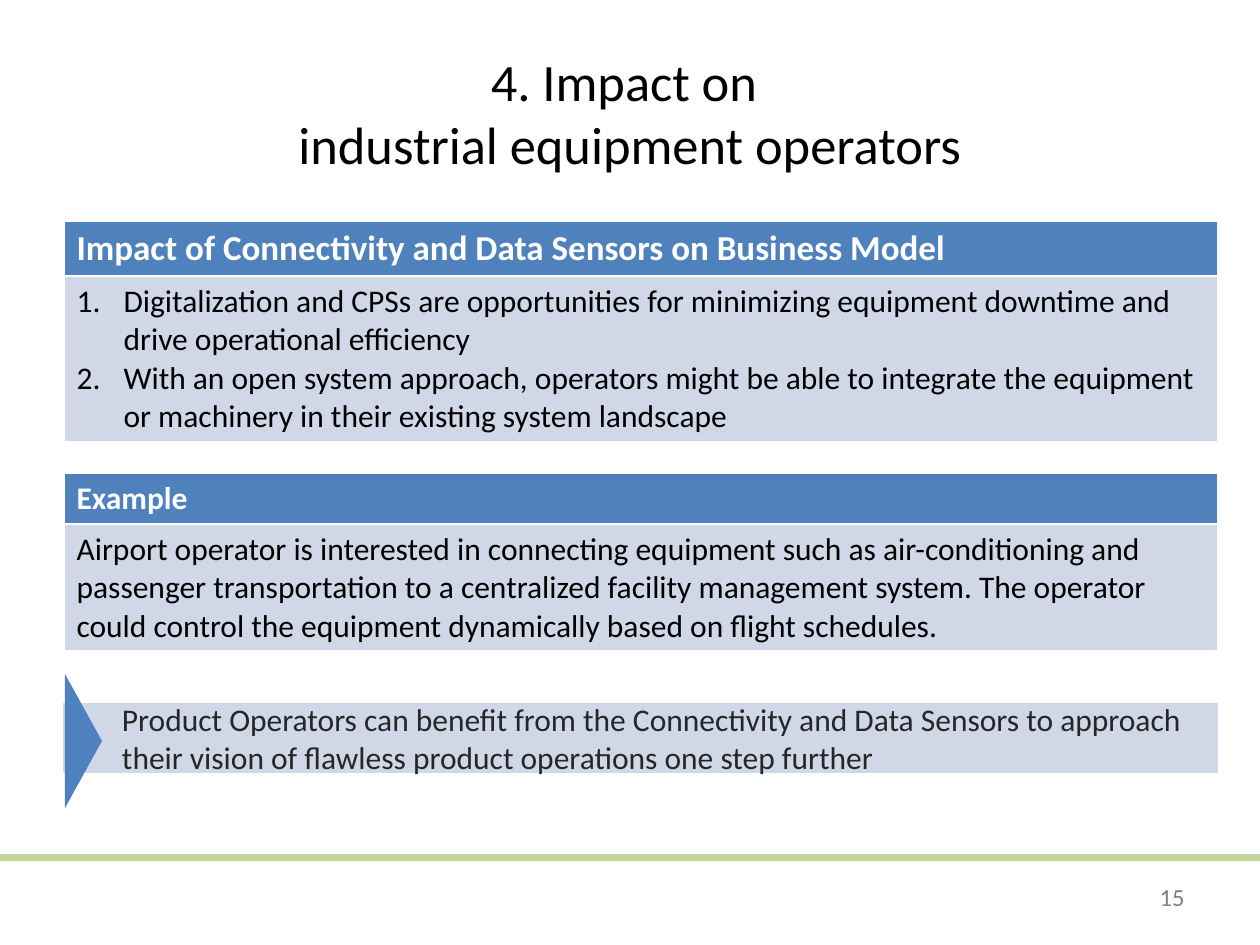
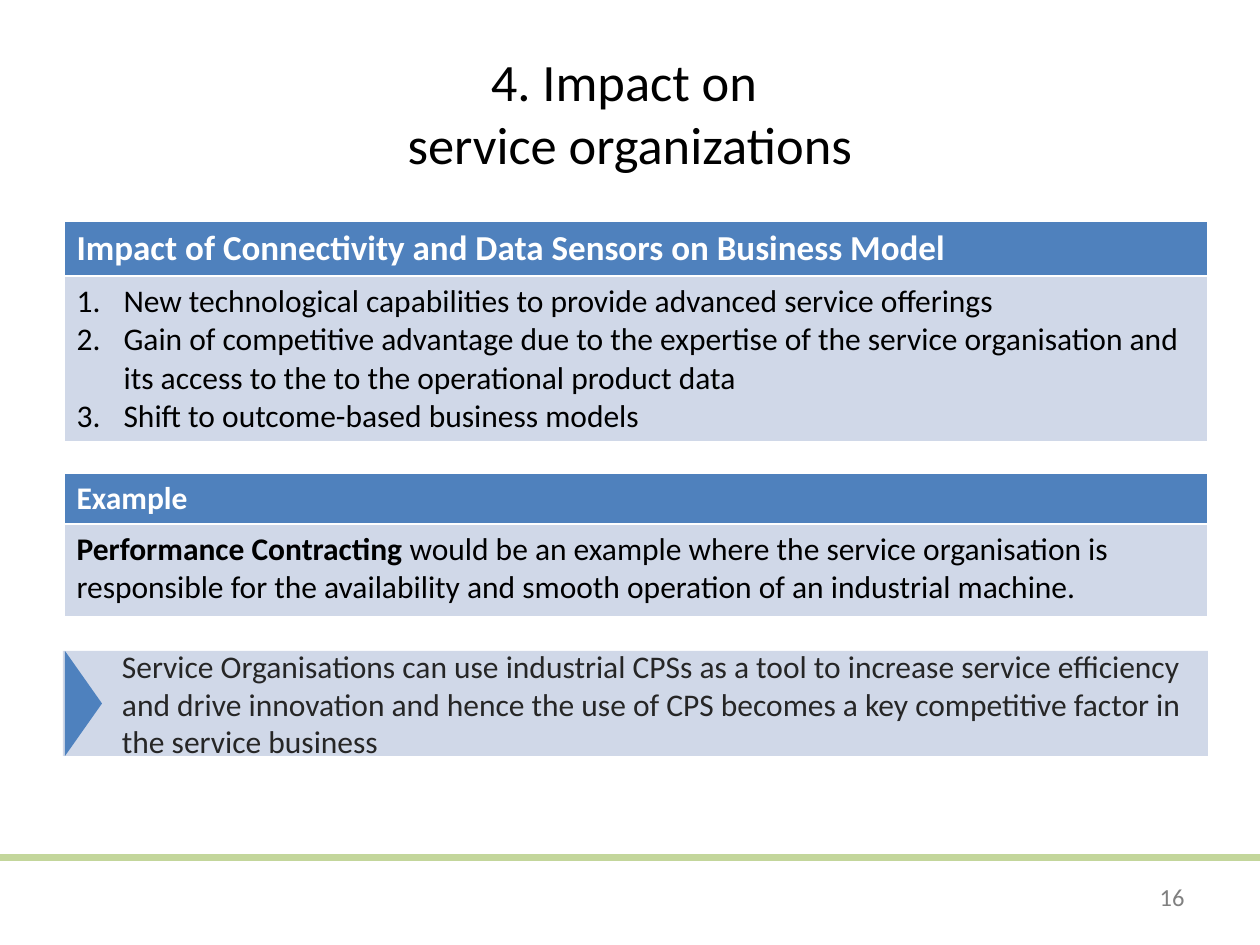
from lxml import etree
from pptx import Presentation
from pptx.dml.color import RGBColor
from pptx.enum.shapes import MSO_SHAPE
from pptx.enum.text import MSO_ANCHOR, PP_ALIGN
from pptx.oxml.ns import qn
from pptx.util import Emu, Pt

PX_PER_INCH = 126
LEFT = 63


def px(n):
    return Emu(round(n * 914400 / PX_PER_INCH))


def rgb(value):
    return RGBColor.from_string(value)


class Deck:
    FONT = "Calibri"
    WHITE, BLACK = "FFFFFF", "000000"
    HEADER, BODY, ARROW = "4F81BD", "D0D8E8", "4E81BE"
    BAND, NUMBER, CLAIM = "C3D69B", "808080", "262626"

    def __init__(self):
        self.prs = Presentation()
        self.prs.slide_width, self.prs.slide_height = px(1260), px(945)
        self.s = None

    def format_text(self, p, size, color, bold=False):
        for r in p.runs:
            r.font.name, r.font.size, r.font.bold = self.FONT, Pt(size), bold
            r.font.color.rgb = rgb(color)

    def shape(self, kind, x, y, w, h, fill):
        sp = self.s.shapes.add_shape(kind, px(x), px(y), px(w), px(h))
        sp.shadow.inherit = False
        sp.fill.solid()
        sp.fill.fore_color.rgb = rgb(fill)
        sp.line.fill.background()
        return sp

    def text(self, x, y, w, h, text, size, color, align):
        sp = self.s.shapes.add_textbox(px(x), px(y), px(w), px(h))
        tf = sp.text_frame
        tf.word_wrap = True
        tf.text = text
        p = tf.paragraphs[0]
        p.alignment = align
        self.format_text(p, size, color)
        return tf

    def slide(self, subject, number):
        self.s = self.prs.slides.add_slide(self.prs.slide_layouts[6])
        self.shape(MSO_SHAPE.RECTANGLE, 0, 854, 1260, 7, self.BAND)
        tf = self.text(LEFT, 38, 1134, 158, f"4. Impact on \v{subject}",
                       30, self.BLACK, PP_ALIGN.CENTER)
        tf.vertical_anchor = MSO_ANCHOR.MIDDLE
        tf.margin_bottom = px(17)
        self.text(903, 876, 294, 50, str(number), 14, self.NUMBER, PP_ALIGN.RIGHT)

    def cell(self, cell, fill):
        # White rules come before the fill in the cell properties
        tc_pr = cell._tc.get_or_add_tcPr()
        for side in ("lnL", "lnR", "lnT", "lnB"):
            ln = etree.SubElement(tc_pr, qn(f"a:{side}"), w=str(Pt(1)))
            solid = etree.SubElement(ln, qn("a:solidFill"))
            etree.SubElement(solid, qn("a:srgbClr"), val=self.WHITE)
        cell.fill.solid()
        cell.fill.fore_color.rgb = rgb(fill)

    def number_paragraph(self, p):
        p_pr = p._p.get_or_add_pPr()
        p_pr.set("marL", str(px(47)))
        p_pr.set("indent", str(-px(47)))
        etree.SubElement(p_pr, qn("a:buAutoNum"), type="arabicPeriod")

    def panel(self, y, w, heights, heading, size, lines, numbered=False, lead=""):
        """Table with a heading row above one text row."""
        table = self.s.shapes.add_table(2, 1, px(LEFT + 1), px(y), px(w),
                                        px(sum(heights))).table
        for row, h in zip(table.rows, heights):
            row.height = px(h)
        head, body = table.cell(0, 0), table.cell(1, 0)
        self.cell(head, self.HEADER)
        self.cell(body, self.BODY)
        head.text_frame.text = heading
        self.format_text(head.text_frame.paragraphs[0], size, self.WHITE, True)
        tf = body.text_frame
        tf.text = "\n".join(lines)
        for p in tf.paragraphs:
            if numbered:
                self.number_paragraph(p)
            if lead:
                p.text = lead
                p.add_run().text = lines[0]
            self.format_text(p, 18, self.BLACK)
            if lead:
                p.runs[0].font.bold = True

    def claim(self, y, w, h, text, arrow_h):
        """Closing statement with a pointer at its left edge."""
        sp = self.shape(MSO_SHAPE.RECTANGLE, LEFT, y, w, h, self.BODY)
        tf = sp.text_frame
        tf.word_wrap = True
        tf.vertical_anchor = MSO_ANCHOR.MIDDLE
        tf.margin_left = px(59)
        tf.text = text
        p = tf.paragraphs[0]
        p.alignment = PP_ALIGN.LEFT
        self.format_text(p, 18, self.CLAIM)
        # The triangle turns about its centre
        base, mid_x, mid_y = 37, 83.5, y + h / 2 + (3 if arrow_h > h else 0)
        arrow = self.shape(MSO_SHAPE.ISOSCELES_TRIANGLE, mid_x - arrow_h / 2,
                           mid_y - base / 2, arrow_h, base, self.ARROW)
        arrow.rotation = 90

    def impact(self, subject, number, w, points, example, example_h, claim, lead=""):
        self.slide(subject, number)
        self.panel(221, w, (55, 166),
                   "Impact of Connectivity and Data Sensors on Business Model",
                   20, points, numbered=True)
        self.panel(473, w, (51, example_h), "Example", 18, [example], lead=lead)
        self.claim(w=w + 1, **claim)


def main():
    deck = Deck()

    # Equipment operators
    deck.impact(
        "industrial equipment operators", 15, 1154,
        ["Digitalization and CPSs are opportunities for minimizing equipment "
         "downtime and drive operational efficiency",
         "With an open system approach, operators might be able to integrate the "
         "equipment or machinery in their existing system landscape"],
        "Airport operator is interested in connecting equipment such as "
        "air-conditioning and passenger transportation to a centralized facility "
        "management system. The operator could control the equipment dynamically "
        "based on flight schedules.", 127,
        dict(y=703, h=70, arrow_h=134,
             text="Product Operators can benefit from the Connectivity and Data "
                  "Sensors to approach their vision of flawless product operations "
                  "one step further"))

    # Service organizations
    deck.impact(
        "service organizations", 16, 1144,
        ["New technological capabilities to provide advanced service offerings",
         "Gain of competitive advantage due to the expertise of the service "
         "organisation and its access to the to the operational product data",
         "Shift to outcome-based business models"],
        "would be an example where the service organisation is responsible for "
        "the availability and smooth operation of an industrial machine.", 93,
        dict(y=651, h=105, arrow_h=105,
             text="Service Organisations can use industrial CPSs as a tool to "
                  "increase service efficiency and drive innovation and hence the "
                  "use of CPS becomes a key competitive factor in the service "
                  "business"),
        lead="Performance Contracting ")

    deck.prs.save("out.pptx")


if __name__ == "__main__":
    main()
